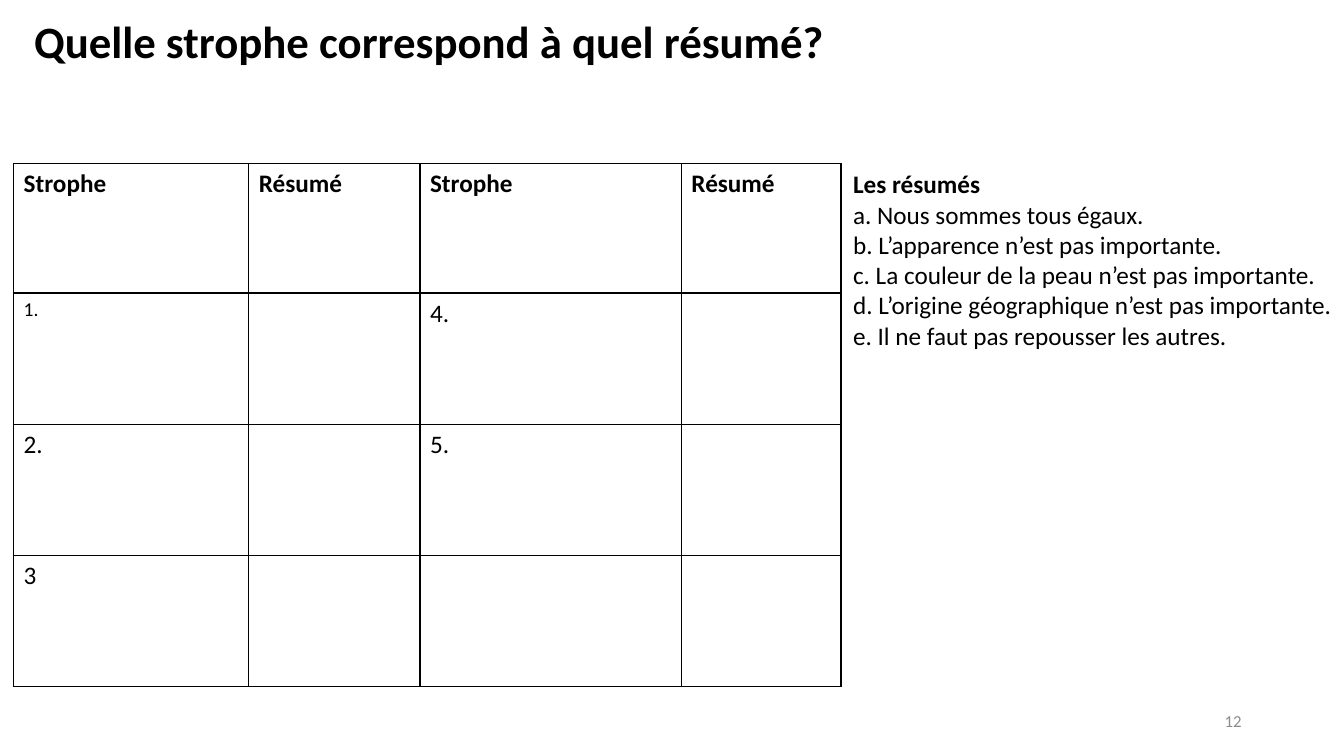
from lxml.etree import SubElement
from pptx import Presentation
from pptx.dml.color import RGBColor
from pptx.enum.text import MSO_ANCHOR, PP_ALIGN
from pptx.oxml.ns import qn
from pptx.util import Pt

EMU_PER_PX = 9525
PAGE_SIZE = (1280, 720)


def px(length):
    return length * EMU_PER_PX


def colour(code):
    return RGBColor.from_string(code)


class Page:
    font = "Calibri"
    ink = "000000"
    grey = "8C8C8C"
    body_size = 18

    def __init__(self, deck):
        self.slide = deck.slides.add_slide(deck.slide_layouts[6])

    def style(self, paragraph, size, bold=False, code=ink):
        for span in paragraph.runs:
            span.font.name = self.font
            span.font.size = Pt(size)
            span.font.bold = bold
            span.font.color.rgb = colour(code)

    def text(self, area, words, size=body_size, code=ink, bold_first=False,
             anchor=MSO_ANCHOR.TOP, align=PP_ALIGN.LEFT, spacing=1.0):
        box = self.slide.shapes.add_textbox(*map(px, area))
        frame = box.text_frame
        frame.word_wrap = True
        frame.vertical_anchor = anchor
        frame.text = words
        for index, paragraph in enumerate(frame.paragraphs):
            paragraph.alignment = align
            paragraph.line_spacing = spacing
            self.style(paragraph, size, bold_first and index == 0, code)

    def border(self, cell):
        properties = cell._tc.get_or_add_tcPr()
        for side in ("lnL", "lnR", "lnT", "lnB"):
            line = SubElement(properties, qn(f"a:{side}"), w=str(Pt(1)))
            fill = SubElement(line, qn("a:solidFill"))
            SubElement(fill, qn("a:srgbClr"), val=self.ink)

    def table(self, left, top, widths, heights, rows, small_entries):
        """Draw a bordered grid with a bold first row; small_entries are set at 14 pt."""
        area = (left, top, sum(widths), sum(heights))
        grid = self.slide.shapes.add_table(len(rows), len(widths), *map(px, area)).table
        grid.first_row = False
        grid.horz_banding = False
        for column, width in zip(grid.columns, widths):
            column.width = px(width)
        for row, height in zip(grid.rows, heights):
            row.height = px(height)
        for row_index, entries in enumerate(rows):
            for column_index, entry in enumerate(entries):
                cell = grid.cell(row_index, column_index)
                self.border(cell)
                cell.fill.background()
                cell.text = entry
                size = 14 if entry in small_entries else self.body_size
                self.style(cell.text_frame.paragraphs[0], size, row_index == 0)


def main():
    deck = Presentation()
    deck.slide_width, deck.slide_height = map(px, PAGE_SIZE)
    page = Page(deck)

    page.text((23, 11, 1210, 62), "Quelle strophe correspond à quel résumé?", size=32,
              bold_first=True, anchor=MSO_ANCHOR.MIDDLE, spacing=0.9)

    strophes = [
        ["Strophe", "Résumé"] * 2,
        ["1.", "", "4.", ""],
        ["2.", "", "5.", ""],
        ["3", "", "", ""],
    ]
    page.table(13, 156, [224, 163, 249, 152], [123] + [125] * 3, strophes, {"1."})

    summaries = [
        "Les résumés",
        "a. Nous sommes tous égaux.",
        "b. L’apparence n’est pas importante.",
        "c. La couleur de la peau n’est pas importante.",
        "d. L’origine géographique n’est pas importante.",
        "e. Il ne faut pas repousser les autres.",
    ]
    page.text((803, 156, 477, 184), "\n".join(summaries), bold_first=True)

    page.text((904, 667, 288, 38), "12", size=12, code=page.grey,
              anchor=MSO_ANCHOR.MIDDLE, align=PP_ALIGN.RIGHT)
    deck.save("out.pptx")


if __name__ == "__main__":
    main()
